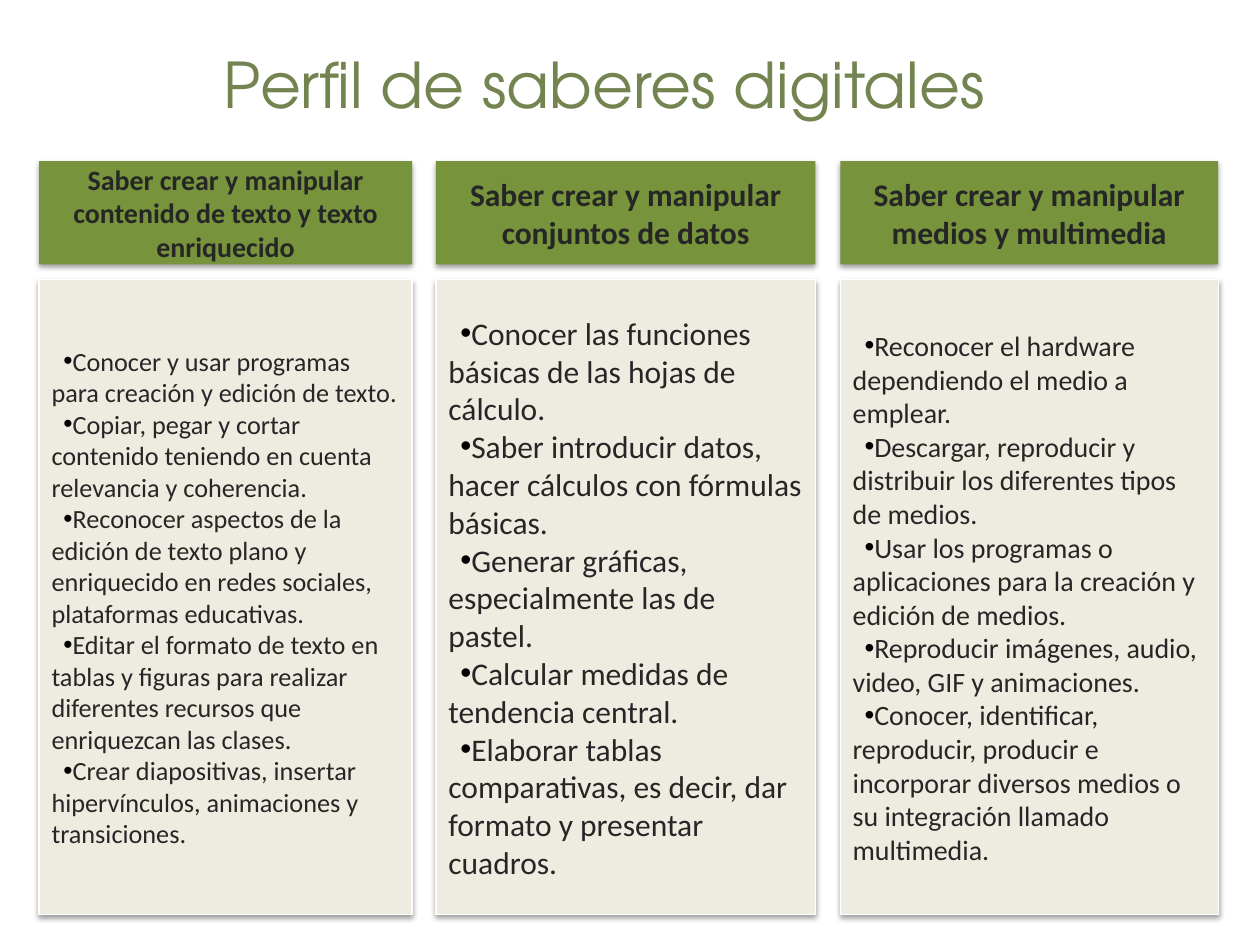
from dataclasses import dataclass

from lxml import etree
from pptx import Presentation
from pptx import util as u
from pptx.dml.color import RGBColor
from pptx.enum import shapes, text
from pptx.oxml import ns


@dataclass(frozen=True)
class Theme:
    title_color: RGBColor = RGBColor(0x73, 0x84, 0x50)
    header_fill: RGBColor = RGBColor(0x77, 0x93, 0x3C)
    body_fill: RGBColor = RGBColor(0xEE, 0xEC, 0xE1)
    body_line: RGBColor = RGBColor(0xFF, 0xFF, 0xFF)
    text_color: RGBColor = RGBColor(0x26, 0x26, 0x26)
    bullet_color: str = "000000"
    title_font: str = "TeX Gyre Adventor"
    text_font: str = "Calibri"
    title_size: int = 36


THEME = Theme()
HEADER_TOP, HEADER_HEIGHT = u.Cm(3.25), u.Cm(2.08)
BODY_TOP, BODY_HEIGHT = u.Cm(5.64), u.Cm(12.8)

# Left and width in cm, header and its size, body size, skills
COLUMNS = [
    (0.79, 7.52, "Saber crear y manipular contenido de texto y texto enriquecido", 16, 15, [
        "Conocer y usar programas para creación y edición de texto.",
        "Copiar, pegar y cortar contenido teniendo en cuenta relevancia y coherencia.",
        "Reconocer aspectos de la edición de texto plano y enriquecido en redes sociales, "
        "plataformas educativas.",
        "Editar el formato de texto en tablas y figuras para realizar diferentes recursos "
        "que enriquezcan las clases.",
        "Crear diapositivas, insertar hipervínculos, animaciones y transiciones.",
    ]),
    (8.79, 7.65, "Saber crear y manipular conjuntos de datos", 18, 18, [
        "Conocer las funciones básicas de las hojas de cálculo.",
        "Saber introducir datos, hacer cálculos con fórmulas básicas.",
        "Generar gráficas, especialmente las de pastel.",
        "Calcular medidas de tendencia central.",
        "Elaborar tablas comparativas, es decir, dar formato y presentar cuadros.",
    ]),
    (16.94, 7.62, "Saber crear y manipular medios y multimedia", 18, 16, [
        "Reconocer el hardware dependiendo el medio a emplear.",
        "Descargar, reproducir y distribuir los diferentes tipos de medios.",
        "Usar los programas o aplicaciones para la creación y edición de medios.",
        "Reproducir imágenes, audio, video, GIF y animaciones.",
        "Conocer, identificar, reproducir, producir e incorporar diversos medios o su "
        "integración llamado multimedia.",
    ]),
]


def add_child(parent, tag, **attributes):
    return etree.SubElement(parent, ns.qn(tag), attributes)


def set_font(paragraph, name, size, color, bold=False):
    font = paragraph.font
    font.name, font.size, font.bold = name, u.Pt(size), bold
    font.color.rgb = color


def add_shadow(shape):
    shape.shadow.inherit = False
    effects = shape._element.spPr.find(ns.qn("a:effectLst"))
    shadow = add_child(effects, "a:outerShdw", blurRad="40000", dist="20000",
                       dir="5400000", rotWithShape="0")
    color = add_child(shadow, "a:srgbClr", val="000000")
    add_child(color, "a:alpha", val="38000")


def add_bullet(paragraph):
    properties = paragraph._p.get_or_add_pPr()
    properties.set("marL", "0")
    properties.set("indent", str(u.Cm(0.24)))
    color = add_child(properties, "a:buClr")
    add_child(color, "a:srgbClr", val=THEME.bullet_color)
    add_child(properties, "a:buFont", typeface="Arial")
    add_child(properties, "a:buChar", char="•")


def add_panel(slide, left, top, width, height, fill, line=None):
    panel = slide.shapes.add_shape(shapes.MSO_SHAPE.RECTANGLE, left, top, width, height)
    panel.fill.solid()
    panel.fill.fore_color.rgb = fill
    if line is None:
        panel.line.fill.background()
    else:
        panel.line.color.rgb = line
        panel.line.width = u.Pt(0.75)
    add_shadow(panel)
    panel.text_frame.word_wrap = True
    panel.text_frame.vertical_anchor = text.MSO_ANCHOR.MIDDLE
    return panel


def add_header(slide, left, width, heading, size):
    panel = add_panel(slide, left, HEADER_TOP, width, HEADER_HEIGHT, THEME.header_fill)
    paragraph = panel.text_frame.paragraphs[0]
    paragraph.text = heading
    paragraph.alignment = text.PP_ALIGN.CENTER
    set_font(paragraph, THEME.text_font, size, THEME.text_color, bold=True)


def add_skills(slide, left, width, skills, size):
    panel = add_panel(slide, left, BODY_TOP, width, BODY_HEIGHT,
                      THEME.body_fill, THEME.body_line)
    panel.text_frame.text = "\n".join(skills)
    for paragraph in panel.text_frame.paragraphs:
        paragraph.alignment = text.PP_ALIGN.LEFT
        add_bullet(paragraph)
        set_font(paragraph, THEME.text_font, size, THEME.text_color)


def set_title(slide, wording):
    title = slide.shapes.title
    title.left, title.top = u.Cm(0.97), u.Cm(0.61)
    title.width, title.height = u.Cm(22.43), u.Cm(2.13)
    frame = title.text_frame
    frame.text = wording
    frame.vertical_anchor = text.MSO_ANCHOR.MIDDLE
    frame.margin_left = frame.margin_right = u.Cm(0.25)
    frame.margin_top = frame.margin_bottom = u.Cm(0.25)
    paragraph = frame.paragraphs[0]
    paragraph.alignment = text.PP_ALIGN.CENTER
    set_font(paragraph, THEME.title_font, THEME.title_size, THEME.title_color)


def main():
    presentation = Presentation()
    presentation.slide_width, presentation.slide_height = u.Cm(25.4), u.Cm(19.05)
    slide = presentation.slides.add_slide(presentation.slide_layouts[5])

    set_title(slide, "Perfil de saberes digitales")

    # One header and one list of skills per column
    for left, width, heading, heading_size, body_size, skills in COLUMNS:
        add_header(slide, u.Cm(left), u.Cm(width), heading, heading_size)
        add_skills(slide, u.Cm(left), u.Cm(width), skills, body_size)

    presentation.save("out.pptx")


if __name__ == "__main__":
    main()
